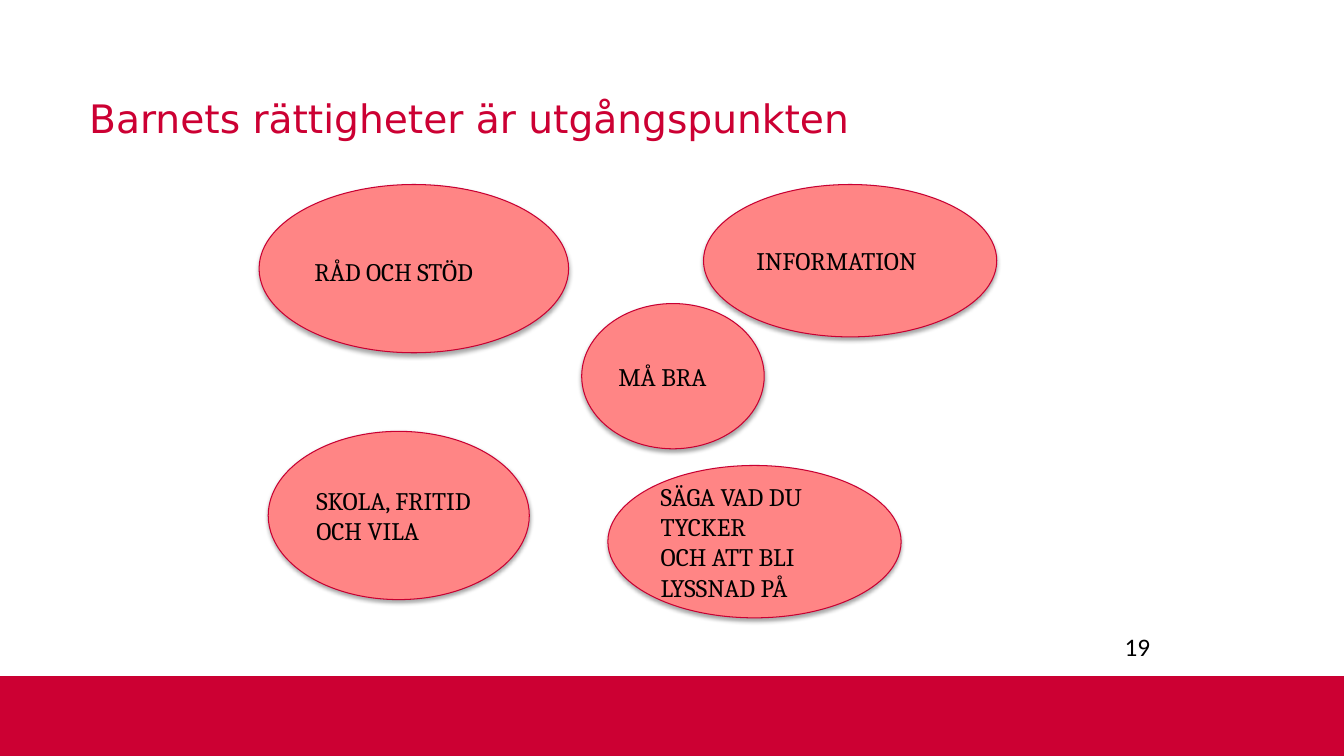
import pptx
import pptx.dml.color
import pptx.enum.shapes
import pptx.enum.text
import pptx.oxml
import pptx.oxml.ns
import pptx.util
from pptx.util import Cm

SHAPE = pptx.enum.shapes.MSO_SHAPE
ANCHOR = pptx.enum.text.MSO_ANCHOR
COLORS = {"red": "CC0033", "outline": "C80032", "pink": "FF8585", "black": "000000"}
SHADOW = (
    f'<a:effectLst {pptx.oxml.ns.nsdecls("a")}>'
    '<a:outerShdw blurRad="39400" dist="22900" dir="5400000" rotWithShape="0">'
    f'<a:srgbClr val="{COLORS["black"]}"><a:alpha val="35000"/></a:srgbClr>'
    '</a:outerShdw></a:effectLst>'
)


def rgb(name):
    return pptx.dml.color.RGBColor.from_string(COLORS[name])


def write(shape, text, font, size=18, color="black", anchor=ANCHOR.MIDDLE, spacing=None):
    frame = shape.text_frame
    frame.word_wrap = True
    frame.vertical_anchor = anchor
    frame.text = text
    for paragraph in frame.paragraphs:
        paragraph.alignment = pptx.enum.text.PP_ALIGN.LEFT
        if spacing:
            paragraph.line_spacing = pptx.util.Pt(spacing)
        paragraph.font.name = font
        paragraph.font.size = pptx.util.Pt(size)
        paragraph.font.color.rgb = rgb(color)


deck = pptx.Presentation()
deck.slide_width, deck.slide_height = Cm(33.87), Cm(19.05)
slide = deck.slides.add_slide(deck.slide_layouts[6])

# Footer band
band = slide.shapes.add_shape(SHAPE.RECTANGLE, Cm(0), Cm(17.04), Cm(33.87), Cm(2.01))
band.shadow.inherit = False
band.fill.solid()
band.fill.fore_color.rgb = rgb("red")
band.line.color.rgb = rgb("outline")
band.line.width = pptx.util.Pt(0.75)

# Title
title = slide.shapes.add_textbox(Cm(2), Cm(1.7), Cm(30.18), Cm(2.54))
write(title, "Barnets rättigheter är utgångspunkten", "DejaVu Sans", size=28, color="red")

# Page number
page_number = slide.shapes.add_shape(SHAPE.DOUBLE_BRACKET, Cm(28.04), Cm(15.72), Cm(1.52), Cm(1.09))
page_number.shadow.inherit = False
page_number.fill.background()
page_number.line.fill.background()
write(page_number, "19", "Calibri", anchor=ANCHOR.TOP)

# Rights of the child: text, left, top, width, height, line spacing
rights = [
    ("INFORMATION", 17.73, 4.65, 7.39, 3.84, None),
    ("RÅD OCH STÖD", 6.53, 4.65, 7.8, 4.24, 26),
    ("MÅ BRA", 14.66, 7.65, 4.6, 3.66, None),
    ("SKOLA, FRITID OCH VILA", 6.76, 10.87, 6.58, 4.24, None),
    ("SÄGA VAD DU TYCKER\nOCH ATT BLI LYSSNAD PÅ", 15.32, 11.73, 7.39, 3.84, None),
]
for text, left, top, width, height, spacing in rights:
    right = slide.shapes.add_shape(SHAPE.OVAL, Cm(left), Cm(top), Cm(width), Cm(height))
    right.fill.solid()
    right.fill.fore_color.rgb = rgb("pink")
    right.line.color.rgb = rgb("outline")
    right.line.width = pptx.util.Pt(0.75)
    right._element.spPr.append(pptx.oxml.parse_xml(SHADOW))
    write(right, text, "Cambria", spacing=spacing)

deck.save("out.pptx")
